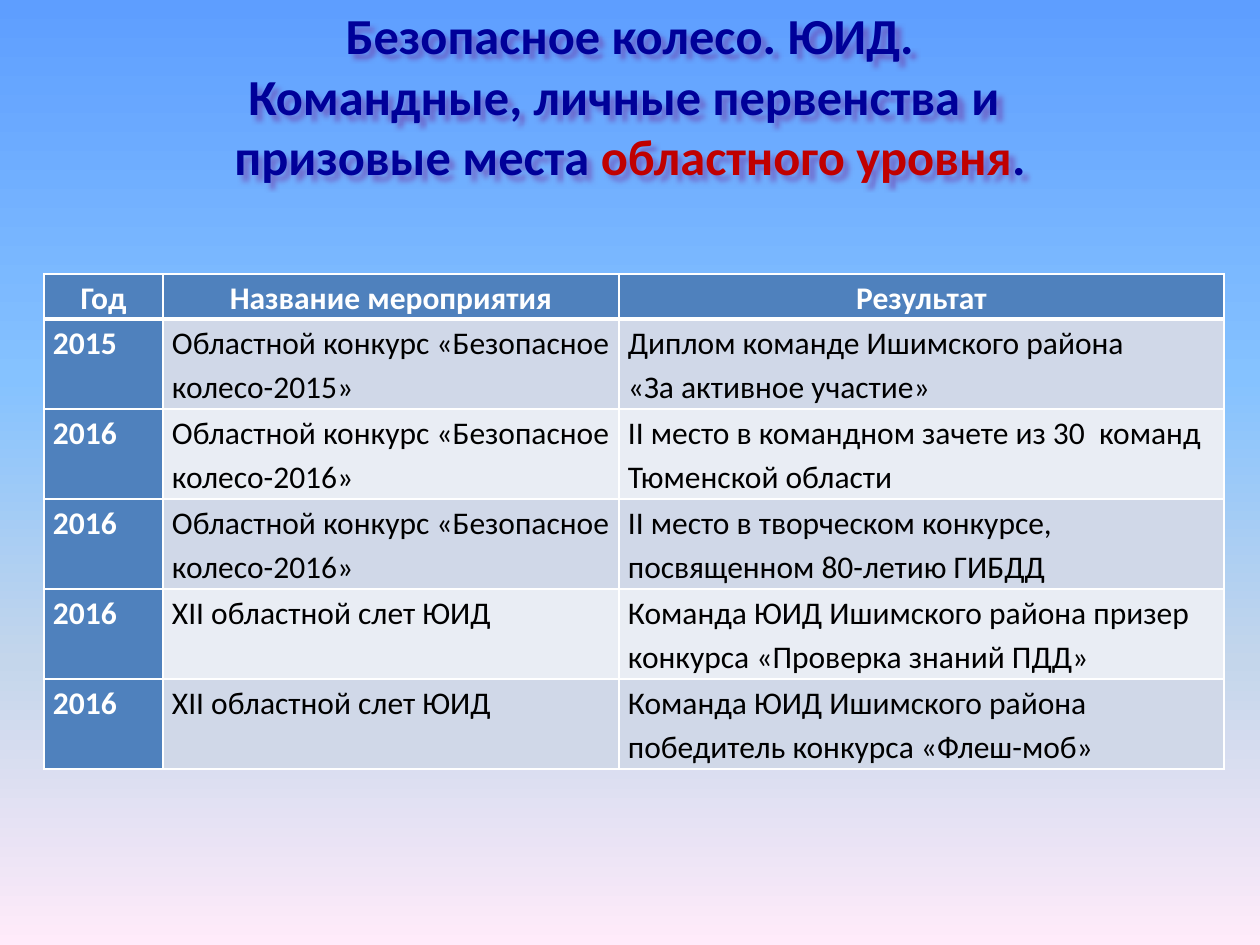
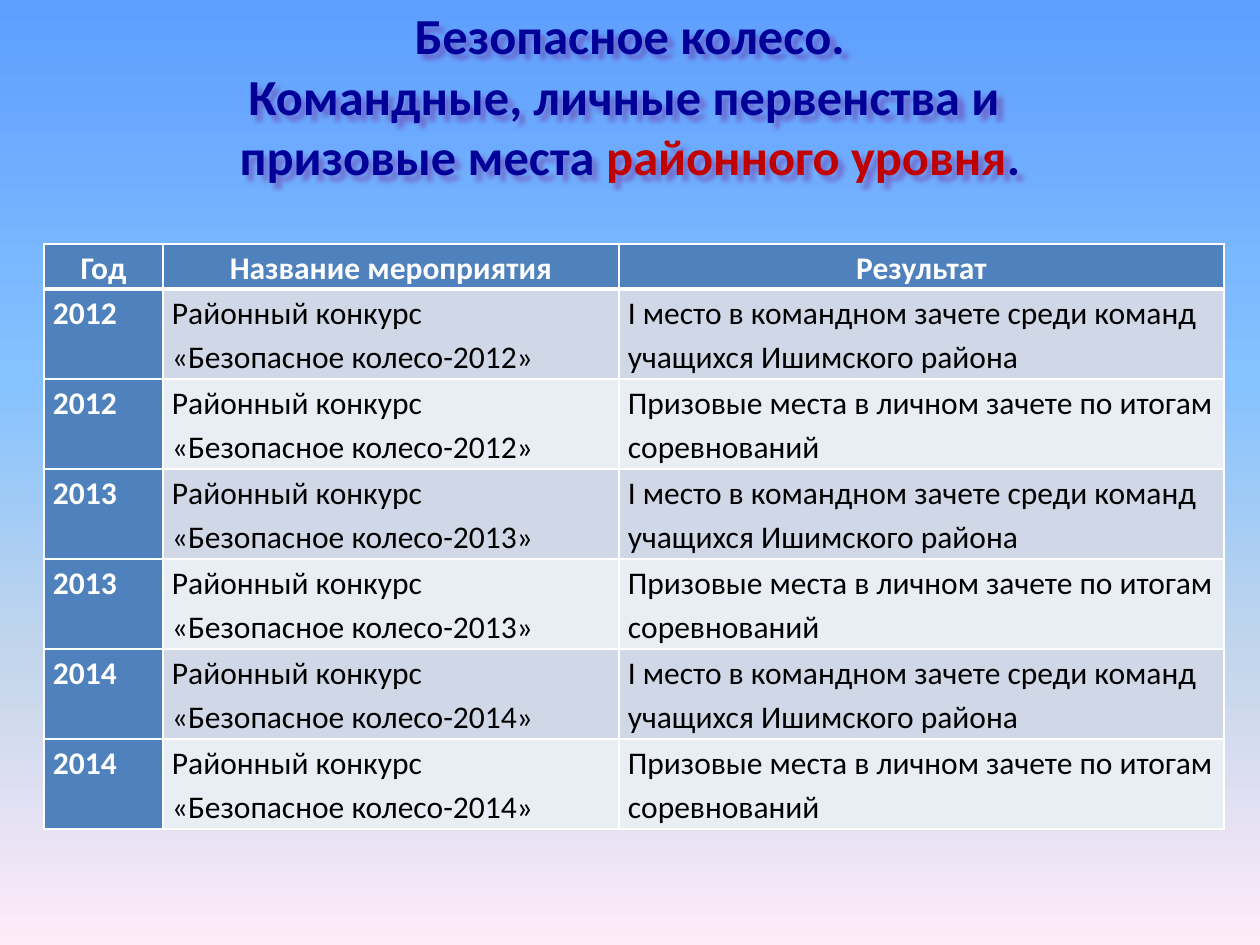
from lxml import etree
from pptx import Presentation
from pptx.dml.color import RGBColor
from pptx.enum.text import MSO_ANCHOR, PP_ALIGN
from pptx.oxml import parse_xml
from pptx.oxml.ns import nsdecls, qn
from pptx.util import Emu, Pt

CENTER, LEFT, MIDDLE = PP_ALIGN.CENTER, PP_ALIGN.LEFT, MSO_ANCHOR.MIDDLE

# Shared look
FONT = "Calibri"
NAVY, RED, WHITE, BLACK = "000099", "C00000", "FFFFFF", "000000"
HEADER_FILL = "4F81BD"
BAND_FILLS = ["D0D8E8", "E9EDF4"]
GRADIENT = [(0, "5E9EFF"), (40, "85C2FF"), (70, "C4D6EB"), (100, "FFEBFA")]
COLUMN_WIDTHS = [119, 456, 605]
HEADER_HEIGHT, ROW_HEIGHT = 45, 90
TABLE_LEFT = 44
HEADINGS = ("Год", "Название мероприятия", "Результат")

# Content: a "\n" in a cell starts a new paragraph
REGIONAL_ROWS = [
    ("2015", "Областной конкурс «Безопасное колесо-2015»",
     "Диплом команде Ишимского района\n«За активное участие»"),
    ("2016", "Областной конкурс «Безопасное колесо-2016»",
     "II место в командном зачете из 30  команд Тюменской области"),
    ("2016", "Областной конкурс «Безопасное колесо-2016»",
     "II место в творческом конкурсе, посвященном 80-летию ГИБДД"),
    ("2016", "XII областной слет ЮИД",
     "Команда ЮИД Ишимского района призер конкурса «Проверка знаний ПДД»"),
    ("2016", "XII областной слет ЮИД",
     "Команда ЮИД Ишимского района победитель конкурса «Флеш-моб»"),
]
DISTRICT_RESULTS = [
    "I место в командном зачете среди команд учащихся Ишимского района",
    "Призовые места в личном зачете по итогам соревнований",
]
DISTRICT_ROWS = [
    (year, f"Районный конкурс\n«Безопасное колесо-{year}»", result)
    for year in ("2012", "2013", "2014")
    for result in DISTRICT_RESULTS
]
SLIDES = [
    ("Безопасное колесо. ЮИД.", "областного уровня", 274, REGIONAL_ROWS),
    ("Безопасное колесо.", "районного уровня", 244, DISTRICT_ROWS),
]


def px(length):
    return Emu(round(length * 914400 / 126))


def format_run(run, size, color, bold):
    run.font.name = FONT
    run.font.size = Pt(size)
    run.font.bold = bold
    run.font.color.rgb = RGBColor.from_string(color)


presentation = Presentation()
presentation.slide_width, presentation.slide_height = px(1260), px(945)
blank_layout = presentation.slide_layouts[6]

# Gradient background, set once on the master
master = presentation.slide_master
background_fill = master.background.fill
background_fill.gradient()
background_fill.gradient_angle = 270
stop_list = next(master.element.iter(qn("a:gsLst")))
for stop in list(stop_list):
    stop_list.remove(stop)
for position, color in GRADIENT:
    stop = etree.SubElement(stop_list, qn("a:gs"), pos=str(position * 1000))
    etree.SubElement(stop, qn("a:srgbClr"), val=color)

for subject, level, table_top, body_rows in SLIDES:
    slide = presentation.slides.add_slide(blank_layout)

    # Title with a soft shadow
    title = slide.shapes.add_textbox(px(0), px(16), px(1260), px(158))
    title.text_frame.word_wrap = True
    title.text_frame.vertical_anchor = MIDDLE
    paragraph = title.text_frame.paragraphs[0]
    paragraph.text = f"{subject}\vКомандные, личные первенства и \vпризовые места "
    paragraph.alignment = CENTER
    for run in paragraph.runs:
        format_run(run, 28.8, NAVY, True)
    for text, color in [(level, RED), (".", NAVY)]:
        run = paragraph.add_run()
        run.text = text
        format_run(run, 28.8, color, True)
    title.element.spPr.append(parse_xml(
        f'<a:effectLst {nsdecls("a")}>'
        '<a:outerShdw blurRad="38100" dist="38100" dir="2700000" algn="tl">'
        '<a:srgbClr val="7030A0"><a:alpha val="50000"/></a:srgbClr>'
        '</a:outerShdw></a:effectLst>'))

    # Results table
    rows = [HEADINGS] + body_rows
    table = slide.shapes.add_table(
        len(rows), len(HEADINGS), px(TABLE_LEFT), px(table_top),
        px(sum(COLUMN_WIDTHS)),
        px(HEADER_HEIGHT + ROW_HEIGHT * len(body_rows))).table
    for column, width in zip(table.columns, COLUMN_WIDTHS):
        column.width = px(width)

    for row_index, values in enumerate(rows):
        is_header = row_index == 0
        table.rows[row_index].height = px(HEADER_HEIGHT if is_header else ROW_HEIGHT)
        for column_index, value in enumerate(values):
            is_label = is_header or column_index == 0
            cell = table.cell(row_index, column_index)
            cell.margin_left = cell.margin_right = px(9)
            cell.margin_top = cell.margin_bottom = 0

            # White borders, thick under the header
            border_widths = {"lnL": 1, "lnR": 1,
                             "lnT": 3 if row_index == 1 else 1,
                             "lnB": 3 if is_header else 1}
            for side, width in border_widths.items():
                cell._tc.get_or_add_tcPr().append(parse_xml(
                    f'<a:{side} {nsdecls("a")} w="{Pt(width)}"><a:solidFill>'
                    f'<a:srgbClr val="{WHITE}"/></a:solidFill></a:{side}>'))
            cell.fill.solid()
            cell.fill.fore_color.rgb = RGBColor.from_string(
                HEADER_FILL if is_label else BAND_FILLS[(row_index - 1) % 2])

            cell.text_frame.text = value
            for paragraph in cell.text_frame.paragraphs:
                paragraph.alignment = CENTER if is_header else LEFT
                paragraph.line_spacing = 1.15
                format_run(paragraph.runs[0], 18, WHITE if is_label else BLACK, is_label)

presentation.save("out.pptx")
